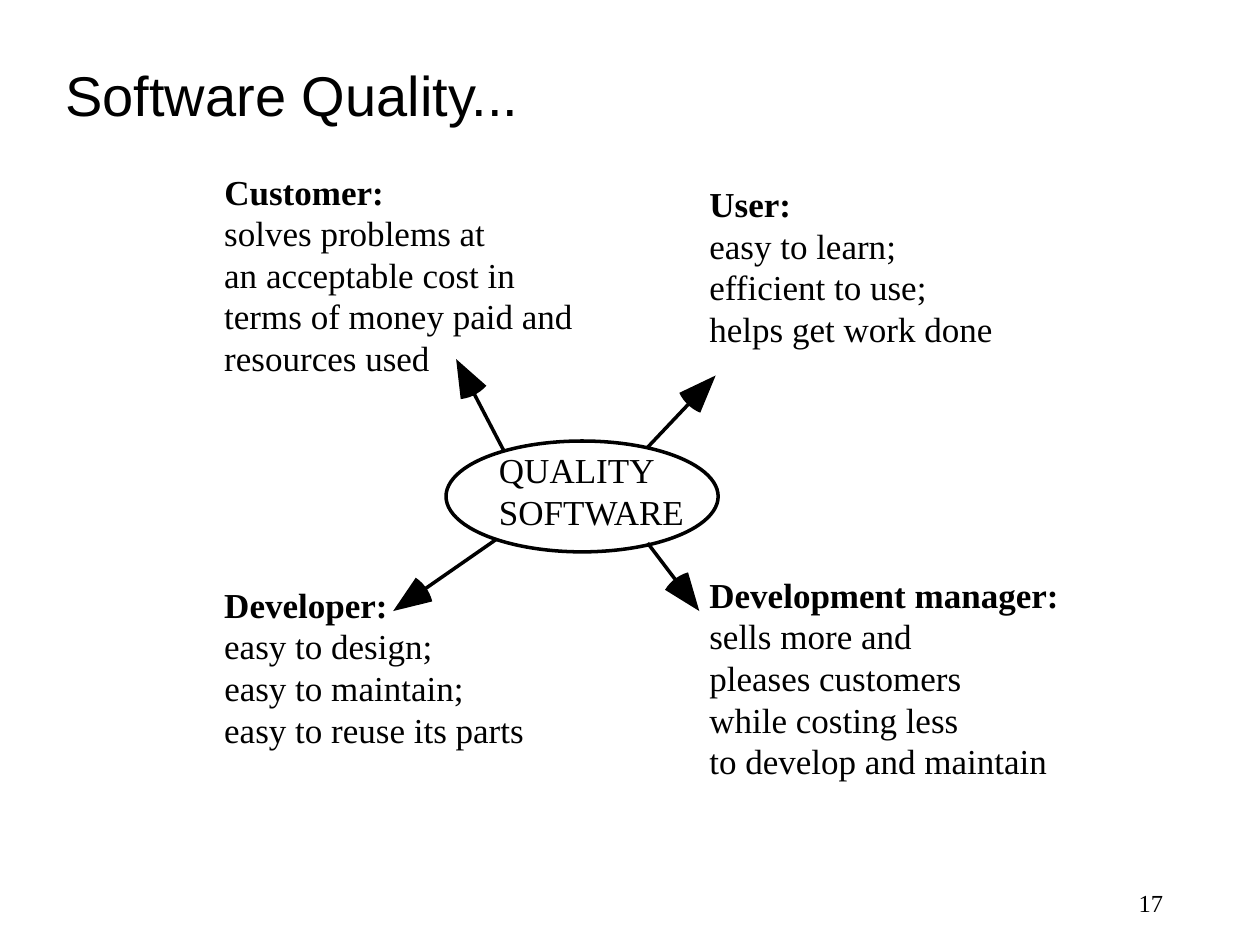
import math

from lxml import etree
from pptx import Presentation
from pptx.dml.color import RGBColor
from pptx.enum import shapes, text
from pptx.oxml import ns
from pptx.util import Inches, Pt

BLACK = RGBColor(0, 0, 0)
WHITE = RGBColor(255, 255, 255)
SERIF = "Times New Roman"
STEP = 0.33  # distance between text lines
HEAD = 0.32  # arrowhead length
SHAFT = 0.29  # gap from arrow tip to shaft end
SPREAD = 21  # half the arrowhead angle, in degrees

# Left, top, then each line with its width; the first line is the role.
ROLES = [
    (1.78, 4.63, [("Developer:", 1.34), ("easy to design;", 1.83),
                  ("easy to maintain;", 2.08),
                  ("easy to reuse its parts", 2.46)]),
    (5.63, 1.45, [("User:", 0.79), ("easy to learn;", 1.64),
                  ("efficient to use;", 1.83),
                  ("helps get work done", 2.32)]),
    (1.78, 1.35, [("Customer:", 1.31), ("solves problems at", 2.24),
                  ("an acceptable cost in", 2.43),
                  ("terms of money paid and", 2.9),
                  ("resources used", 1.67)]),
    (5.63, 4.55, [("Development manager:", 2.79), ("sells more and", 1.78),
                  ("pleases customers", 2.13), ("while costing less", 2.16),
                  ("to develop and maintain", 2.76)]),
]
# Root at the oval, then tip at the role.
ARROWS = [
    ((4, 3.58), (3.62, 2.85)),
    ((3.94, 4.28), (3.12, 4.85)),
    ((5.14, 4.31), (5.55, 4.85)),
    ((5.14, 3.55), (5.68, 2.98)),
]


def write(frame, words, size=20, font=SERIF, bold=False,
          align=text.PP_ALIGN.LEFT):
    para = frame.paragraphs[0]
    para.alignment = align
    run = para.add_run()
    run.text = words
    run.font.size = Pt(size)
    run.font.name = font
    run.font.bold = bold
    run.font.color.rgb = BLACK


def add_lines(parent, left, top, lines, headed=True):
    """Stack one tight text box per line; a headed stack starts in bold."""
    for row, (words, width) in enumerate(lines):
        box = parent.add_textbox(Inches(left), Inches(top + row * STEP),
                                 Inches(width), Inches(0.38))
        frame = box.text_frame
        frame.margin_left = frame.margin_right = 0
        frame.margin_top = frame.margin_bottom = 0
        frame.word_wrap = False
        frame.auto_size = text.MSO_AUTO_SIZE.SHAPE_TO_FIT_TEXT
        write(frame, words, bold=headed and row == 0)


def add_title(slide, words):
    title = slide.shapes.title
    title.left, title.top = Inches(0.42), Inches(0.25)
    title.width, title.height = Inches(9), Inches(1)
    title.text_frame.vertical_anchor = text.MSO_ANCHOR.MIDDLE
    write(title.text_frame, words, size=32, font="Arial")


def add_number(slide, words):
    box = slide.shapes.add_textbox(Inches(8.83), Inches(7),
                                   Inches(0.5), Inches(0.5))
    box.text_frame.word_wrap = True
    write(box.text_frame, words, size=14, align=text.PP_ALIGN.RIGHT)


def add_hub(slide):
    group = slide.shapes.add_group_shape()
    oval = group.shapes.add_shape(shapes.MSO_SHAPE.OVAL, Inches(3.54),
                                  Inches(3.5), Inches(2.16), Inches(0.88))
    oval.shadow.inherit = False
    oval.fill.solid()
    oval.fill.fore_color.rgb = WHITE
    oval.line.color.rgb = BLACK
    oval.line.width = Pt(2)
    add_lines(group.shapes, 3.96, 3.56,
              [("QUALITY", 1.39), ("SOFTWARE", 1.64)], headed=False)


def add_arrow(slide, root, tip):
    """Draw a shaft and a round-backed head, a sector centred on the tip."""
    back = math.atan2(root[1] - tip[1], root[0] - tip[0])

    def spot(reach, turn=0):
        angle = back + math.radians(turn)
        return (Inches(tip[0] + reach * math.cos(angle)),
                Inches(tip[1] + reach * math.sin(angle)))

    path = slide.shapes.build_freeform(*spot(0))
    path.add_line_segments([spot(HEAD, turn)
                            for turn in range(-SPREAD, SPREAD + 1, 6)])
    head = path.convert_to_shape()
    head.shadow.inherit = False
    head.fill.solid()
    head.fill.fore_color.rgb = BLACK
    head.line.fill.background()

    shaft = slide.shapes.add_connector(
        shapes.MSO_CONNECTOR.STRAIGHT, Inches(root[0]), Inches(root[1]),
        *spot(SHAFT))
    shaft.line.color.rgb = BLACK
    shaft.line.width = Pt(2)
    etree.SubElement(shaft._element.spPr, ns.qn("a:effectLst"))


def main():
    deck = Presentation()
    deck.slide_width, deck.slide_height = Inches(10), Inches(7.5)
    slide = deck.slides.add_slide(deck.slide_layouts[5])
    add_number(slide, "17")
    add_title(slide, "Software Quality...")
    add_hub(slide)
    for left, top, lines in ROLES:
        add_lines(slide.shapes, left, top, lines)
    for root, tip in ARROWS:
        add_arrow(slide, root, tip)
    deck.save("out.pptx")


if __name__ == "__main__":
    main()
